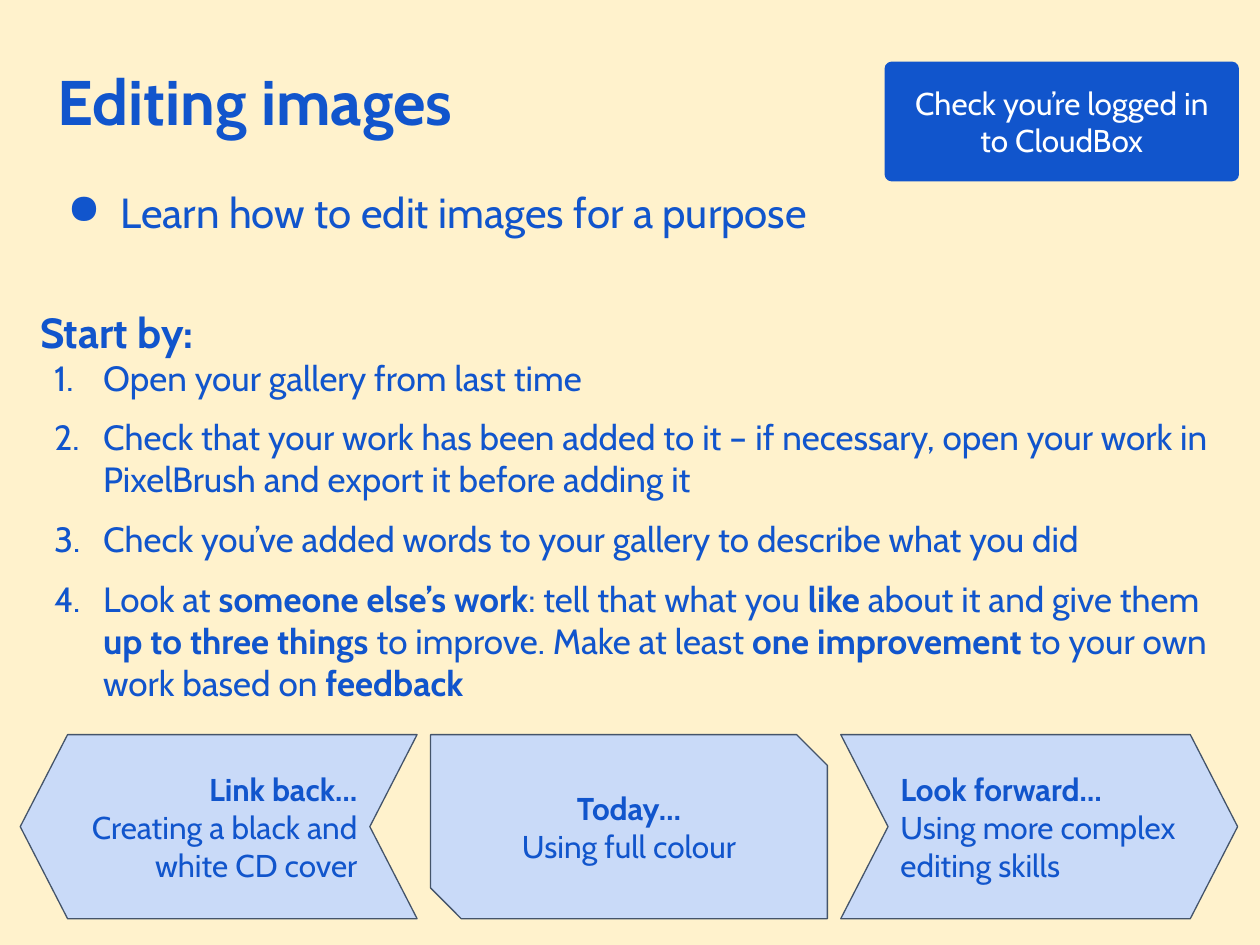
from dataclasses import dataclass
from typing import Optional

from lxml.etree import SubElement
from pptx import Presentation
from pptx.dml.color import RGBColor
from pptx.enum.shapes import MSO_SHAPE
from pptx.enum.text import MSO_ANCHOR, MSO_AUTO_SIZE, PP_ALIGN
from pptx.oxml.ns import qn
from pptx.util import Cm, Pt

FONT = "Cabin"
CREAM = RGBColor(0xFF, 0xF2, 0xCC)
BLUE = RGBColor(0x11, 0x55, 0xCC)
PALE_BLUE = RGBColor(0xC9, 0xDA, 0xF8)
SLATE = RGBColor(0x44, 0x54, 0x6A)
WHITE = RGBColor(0xFF, 0xFF, 0xFF)

STAGE_LEFT, STAGE_PITCH = 0.41, 8.27
STAGE_TOP, STAGE_WIDTH, STAGE_HEIGHT = 14.81, 8, 3.71


@dataclass
class Bullet:
    tag: str
    attribute: str
    value: str
    hanging: float


@dataclass
class Stage:
    heading: str
    detail: str
    kind: MSO_SHAPE
    adjustments: tuple
    align: PP_ALIGN
    flipped: bool = False


DOT = Bullet("a:buChar", "char", "●", 1.07)
NUMBER = Bullet("a:buAutoNum", "type", "arabicPeriod", 0.99)

STEPS = [
    "Open your gallery from last time",
    "Check that your work has been added to it –\u00a0if necessary, open your work in "
    "PixelBrush and export it before adding it",
    "Check you’ve added words to your gallery to describe what you did",
    "Look at **someone else’s work**: tell that what you **like** about it and give them "
    "**up to three things** to improve. Make at least **one improvement** to your own "
    "work based on **feedback**",
]

STAGES = [
    Stage("Link back…", "Creating a black and white CD cover",
          MSO_SHAPE.CHEVRON, (0.257,), PP_ALIGN.RIGHT, flipped=True),
    Stage("Today…", "Using full colour",
          MSO_SHAPE.SNIP_2_DIAG_RECTANGLE, (0, 0.167), PP_ALIGN.CENTER),
    Stage("Look forward…", "Using more complex editing skills",
          MSO_SHAPE.CHEVRON, (0.257,), PP_ALIGN.LEFT),
]


def set_bullet(paragraph, bullet: Bullet) -> None:
    properties = paragraph._p.get_or_add_pPr()
    properties.set("marL", str(Cm(1.27)))
    properties.set("indent", str(-Cm(bullet.hanging)))
    colour = SubElement(properties, qn("a:buClr"))
    SubElement(colour, qn("a:srgbClr")).set("val", str(BLUE))
    SubElement(properties, qn(bullet.tag)).set(bullet.attribute, bullet.value)


def write(text_frame, text: str, *, size: float, colour: RGBColor = BLUE,
          align: PP_ALIGN = PP_ALIGN.LEFT, space_before: float = 0,
          line_spacing: float = 1.0, bullet: Optional[Bullet] = None) -> None:
    """Add one paragraph; text between double asterisks is bold."""
    paragraph = text_frame.paragraphs[0]
    if paragraph.runs:
        paragraph = text_frame.add_paragraph()
    paragraph.alignment = align
    paragraph.line_spacing = line_spacing
    paragraph.space_before = Pt(space_before)
    if bullet:
        set_bullet(paragraph, bullet)
    for index, part in enumerate(text.split("**")):
        if part:
            run = paragraph.add_run()
            run.text = part
            run.font.name = FONT
            run.font.size = Pt(size)
            run.font.bold = index % 2 == 1
            run.font.color.rgb = colour


def format_frame(text_frame, anchor: MSO_ANCHOR, vertical_inset: float = 0.25) -> None:
    text_frame.word_wrap = True
    text_frame.auto_size = MSO_AUTO_SIZE.NONE
    text_frame.vertical_anchor = anchor
    text_frame.margin_left = text_frame.margin_right = Cm(0.25)
    text_frame.margin_top = text_frame.margin_bottom = Cm(vertical_inset)


def add_text_box(slide, left: float, top: float, width: float, height: float,
                 vertical_inset: float = 0.25):
    box = slide.shapes.add_textbox(Cm(left), Cm(top), Cm(width), Cm(height))
    format_frame(box.text_frame, MSO_ANCHOR.TOP, vertical_inset)
    return box.text_frame


def add_panel(slide, kind: MSO_SHAPE, left: float, top: float, width: float, height: float,
              *, adjustments: tuple, fill: RGBColor, line: RGBColor, line_width: float):
    shape = slide.shapes.add_shape(kind, Cm(left), Cm(top), Cm(width), Cm(height))
    for index, value in enumerate(adjustments):
        shape.adjustments[index] = value
    shape.shadow.inherit = False
    shape.fill.solid()
    shape.fill.fore_color.rgb = fill
    shape.line.color.rgb = line
    shape.line.width = Pt(line_width)
    format_frame(shape.text_frame, MSO_ANCHOR.MIDDLE)
    return shape


def add_stage(slide, stage: Stage, left: float) -> None:
    shape = add_panel(slide, stage.kind, left, STAGE_TOP, STAGE_WIDTH, STAGE_HEIGHT,
                      adjustments=stage.adjustments, fill=PALE_BLUE, line=SLATE,
                      line_width=0.75)
    if stage.flipped:
        shape.element.spPr.find(qn("a:xfrm")).set("flipH", "1")
    write(shape.text_frame, f"**{stage.heading}**", size=18, align=stage.align)
    write(shape.text_frame, stage.detail, size=18, align=stage.align)


def main() -> None:
    presentation = Presentation()
    presentation.slide_width, presentation.slide_height = Cm(25.4), Cm(19.05)
    slide = presentation.slides.add_slide(presentation.slide_layouts[5])
    slide.background.fill.solid()
    slide.background.fill.fore_color.rgb = CREAM

    title = slide.shapes.title
    title.left, title.top = Cm(0.91), Cm(0.97)
    title.width, title.height = Cm(24.03), Cm(2.29)
    format_frame(title.text_frame, MSO_ANCHOR.MIDDLE, vertical_inset=0.13)
    write(title.text_frame, "**Editing images**", size=36, line_spacing=0.9)

    aim = add_text_box(slide, 0.91, 3.63, 24.03, 1.27, vertical_inset=0.13)
    write(aim, "Learn how to edit images for a purpose", size=24, bullet=DOT)

    instructions = add_text_box(slide, 0.56, 5.92, 24.38, 8.59)
    write(instructions, "**Start by:**", size=24)
    for index, step in enumerate(STEPS):
        write(instructions, step, size=20, bullet=NUMBER, space_before=10 if index else 0)

    for index, stage in enumerate(STAGES):
        add_stage(slide, stage, STAGE_LEFT + index * STAGE_PITCH)

    reminder = add_panel(slide, MSO_SHAPE.ROUNDED_RECTANGLE, 17.86, 1.27, 7.09, 2.36,
                         adjustments=(0.048,), fill=BLUE, line=BLUE, line_width=1.5)
    write(reminder.text_frame, "Check you’re logged in to CloudBox", size=18,
          colour=WHITE, align=PP_ALIGN.CENTER)

    presentation.save("out.pptx")


if __name__ == "__main__":
    main()
